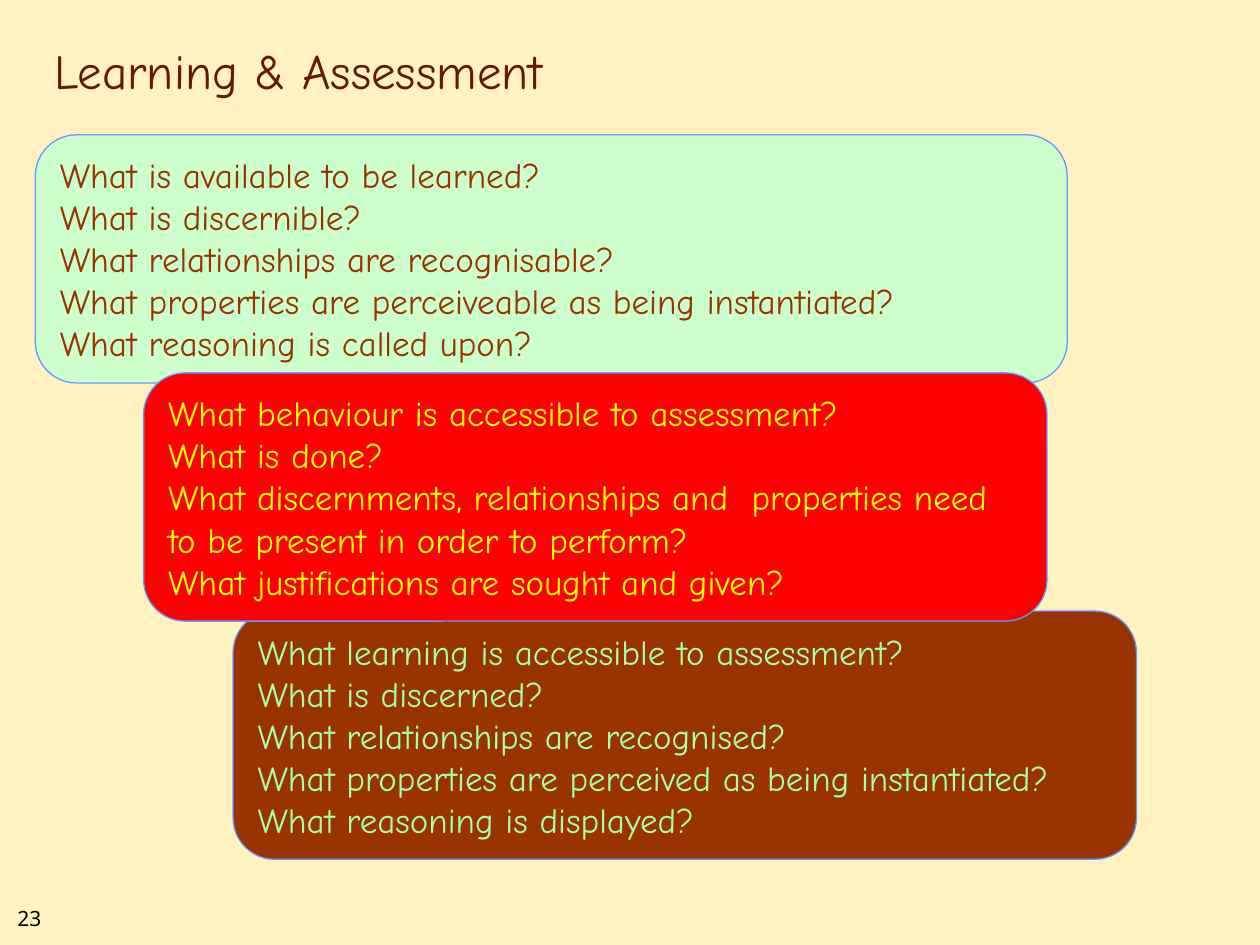
import pptx
import pptx.util
import pptx.dml.color
import pptx.enum.shapes
import pptx.enum.text
from dataclasses import dataclass

Inches = pptx.util.Inches
RGB = pptx.dml.color.RGBColor.from_string
ANCHOR = pptx.enum.text.MSO_ANCHOR


@dataclass(frozen=True)
class Theme:
    background: str = "FFF2C0"
    title: str = "631908"
    number: str = "000000"
    outline: str = "6699FF"
    font: str = "Comic Neue"
    number_font: str = "Noto Sans"
    title_size: int = 28
    body_size: int = 20
    number_size: int = 12


THEME = Theme()

# Panels from back to front: box, fill, text colour, questions
PANELS = [
    ((0.28, 1.07, 8.19, 1.97), "CCFFCC", "993300", [
        "What is available to be learned?",
        "What is discernible?",
        "What relationships are recognisable?",
        "What properties are perceiveable as being instantiated?",
        "What reasoning is called upon?"]),
    ((1.85, 4.85, 7.17, 1.97), "993300", "A5FFA5", [
        "What learning is accessible to assessment?",
        "What is discerned?",
        "What relationships are recognised?",
        "What properties are perceived as being instantiated?",
        "What reasoning is displayed?"]),
    ((1.14, 2.96, 7.17, 1.97), "FF0000", "FFFF00", [
        "What behaviour is accessible to assessment?",
        "What is done?",
        "What discernments, relationships and  properties need "
        "to be present in order to perform?",
        "What justifications are sought and given?"]),
]


def write(sp, lines, font, size, color, anchor):
    """Fill a shape with left-aligned paragraphs in one style."""
    tf = sp.text_frame
    frame = {"word_wrap": True, "vertical_anchor": anchor,
             "auto_size": pptx.enum.text.MSO_AUTO_SIZE.NONE,
             "margin_left": Inches(0.1), "margin_right": Inches(0.1),
             "margin_top": Inches(0.05), "margin_bottom": Inches(0.05)}
    for name, value in frame.items():
        setattr(tf, name, value)
    for i, line in enumerate(lines):
        p = tf.add_paragraph() if i else tf.paragraphs[0]
        p.alignment = pptx.enum.text.PP_ALIGN.LEFT
        r = p.add_run()
        r.text = line
        style = {"name": font, "size": pptx.util.Pt(size), "bold": False}
        for name, value in style.items():
            setattr(r.font, name, value)
        r.font.color.rgb = RGB(color)


def add_title(s, box, text):
    sp = s.shapes.title
    for name, value in zip(("left", "top", "width", "height"), box):
        setattr(sp, name, Inches(value))
    write(sp, [text], THEME.font, THEME.title_size, THEME.title, ANCHOR.BOTTOM)


def add_panel(s, box, fill, color, lines):
    sp = s.shapes.add_shape(pptx.enum.shapes.MSO_SHAPE.ROUNDED_RECTANGLE,
                            *map(Inches, box))
    sp.shadow.inherit = False
    sp.fill.solid()
    sp.fill.fore_color.rgb = RGB(fill)
    sp.line.color.rgb = RGB(THEME.outline)
    sp.line.width = pptx.util.Pt(0.75)
    write(sp, lines, THEME.font, THEME.body_size, color, ANCHOR.MIDDLE)


def add_number(s, box, text):
    sp = s.shapes.add_textbox(*map(Inches, box))
    write(sp, [text], THEME.number_font, THEME.number_size, THEME.number,
          ANCHOR.TOP)


def main():
    prs = pptx.Presentation()
    prs.slide_width, prs.slide_height = Inches(10), Inches(7.5)
    s = prs.slides.add_slide(prs.slide_layouts.get_by_name("Title Only"))

    # Background
    s.background.fill.solid()
    s.background.fill.fore_color.rgb = RGB(THEME.background)

    # Title, overlapping panels and page number
    add_title(s, (0.33, 0.17, 8.5, 0.67), "Learning & Assessment")
    for panel in PANELS:
        add_panel(s, *panel)
    add_number(s, (0.04, 7.14, 0.75, 0.3), "23")

    prs.save("out.pptx")


if __name__ == "__main__":
    main()
